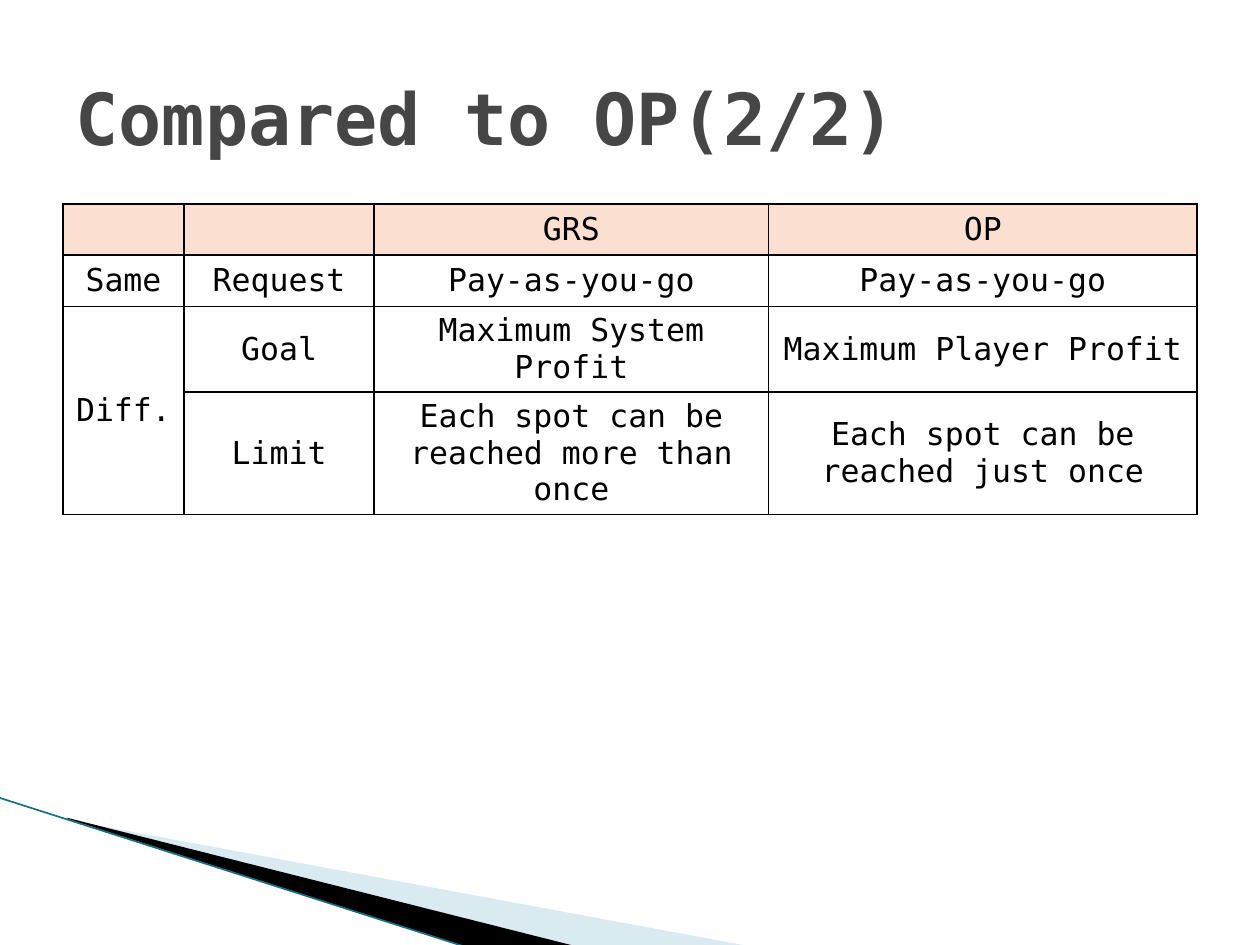
from lxml import etree
from pptx import Presentation
from pptx.dml.color import RGBColor
from pptx.enum.shapes import MSO_CONNECTOR
from pptx.enum.text import MSO_ANCHOR, MSO_AUTO_SIZE, PP_ALIGN
from pptx.oxml.ns import qn
from pptx.util import Inches, Pt

FONT = "DejaVu Sans Mono"
BLACK = RGBColor(0x00, 0x00, 0x00)
TITLE_GRAY = RGBColor(0x46, 0x46, 0x46)
HEADER_PEACH = RGBColor(0xFB, 0xE0, 0xD1)
PALE_BLUE = RGBColor(0xA0, 0xCB, 0xDC)
TEAL = RGBColor(0x16, 0x70, 0x85)

COLUMN_WIDTHS = [0.96, 1.51, 3.13, 3.4]
ROW_HEIGHT = Pt(29.2)
ROWS = [
    ["", "", "GRS", "OP"],
    ["Same", "Request", "Pay-as-you-go", "Pay-as-you-go"],
    ["Diff.", "Goal", "Maximum System Profit", "Maximum Player Profit"],
    ["", "Limit", "Each spot can be reached more than once",
     "Each spot can be reached just once"],
]


def format_font(font, size, color, bold=False):
    font.name = FONT
    font.size = Pt(size)
    font.bold = bold
    font.color.rgb = color


def add_wedge(slide, points, color, opacity=None):
    start, *others = [(Inches(x), Inches(y)) for x, y in points]
    builder = slide.shapes.build_freeform(*start)
    builder.add_line_segments(others, close=True)
    shape = builder.convert_to_shape()
    shape.shadow.inherit = False
    shape.line.fill.background()
    shape.fill.solid()
    shape.fill.fore_color.rgb = color
    if opacity is not None:
        color_element = shape._element.spPr.find(".//" + qn("a:srgbClr"))
        etree.SubElement(color_element, qn("a:alpha"), val=str(opacity * 1000))


def add_line(slide, start, end, color, width):
    line = slide.shapes.add_connector(
        MSO_CONNECTOR.STRAIGHT, *map(Inches, start + end))
    line.line.color.rgb = color
    line.line.width = Pt(width)
    etree.SubElement(line._element.spPr, qn("a:effectLst"))


def set_borders(cell, color, width):
    properties = cell._tc.get_or_add_tcPr()
    for side in ("lnL", "lnR", "lnT", "lnB"):
        border = etree.SubElement(properties, qn("a:" + side), w=str(Pt(width)))
        fill = etree.SubElement(border, qn("a:solidFill"))
        etree.SubElement(fill, qn("a:srgbClr"), val=str(color))


def fill_cell(cell, text, background=None):
    set_borders(cell, BLACK, 1)
    if background is None:
        cell.fill.background()
    else:
        cell.fill.solid()
        cell.fill.fore_color.rgb = background
    cell.vertical_anchor = MSO_ANCHOR.MIDDLE
    cell.text = text
    paragraph = cell.text_frame.paragraphs[0]
    paragraph.alignment = PP_ALIGN.CENTER
    for run in paragraph.runs:
        format_font(run.font, 18, BLACK)


def add_comparison_table(slide, left, top):
    table = slide.shapes.add_table(
        len(ROWS), len(COLUMN_WIDTHS), Inches(left), Inches(top),
        Inches(sum(COLUMN_WIDTHS)), ROW_HEIGHT * len(ROWS)).table
    for column, width in zip(table.columns, COLUMN_WIDTHS):
        column.width = Inches(width)
    for row_index, texts in enumerate(ROWS):
        table.rows[row_index].height = ROW_HEIGHT
        background = HEADER_PEACH if row_index == 0 else None
        for column_index, text in enumerate(texts):
            fill_cell(table.cell(row_index, column_index), text, background)
    # "Diff." covers both the goal and the limit
    table.cell(2, 0).merge(table.cell(3, 0))


def set_title(slide, text):
    title = slide.shapes.title
    title.left, title.top, title.width, title.height = map(
        Inches, (0.5, 0.3, 9, 1.25))
    frame = title.text_frame
    frame.text = text
    frame.auto_size = MSO_AUTO_SIZE.NONE
    frame.vertical_anchor = MSO_ANCHOR.MIDDLE
    paragraph = frame.paragraphs[0]
    paragraph.alignment = PP_ALIGN.LEFT
    format_font(paragraph.runs[0].font, 41, TITLE_GRAY, bold=True)


def main():
    presentation = Presentation()
    presentation.slide_width = Inches(10)
    presentation.slide_height = Inches(7.5)
    slide = presentation.slides.add_slide(presentation.slide_layouts[5])

    # Corner decoration
    add_wedge(slide, [(0.55, 6.51), (5.95, 7.51), (4.56, 7.51), (0.55, 6.5)],
              PALE_BLUE, opacity=40)
    add_wedge(slide, [(0.53, 6.49), (4.57, 7.51), (3.72, 7.52), (0.54, 6.5)],
              BLACK)
    add_line(slide, (-0.01, 6.33), (3.71, 7.52), TEAL, 0.95)

    # Content
    add_comparison_table(slide, 0.5, 1.62)
    set_title(slide, "Compared to OP(2/2)")

    presentation.save("out.pptx")


if __name__ == "__main__":
    main()
